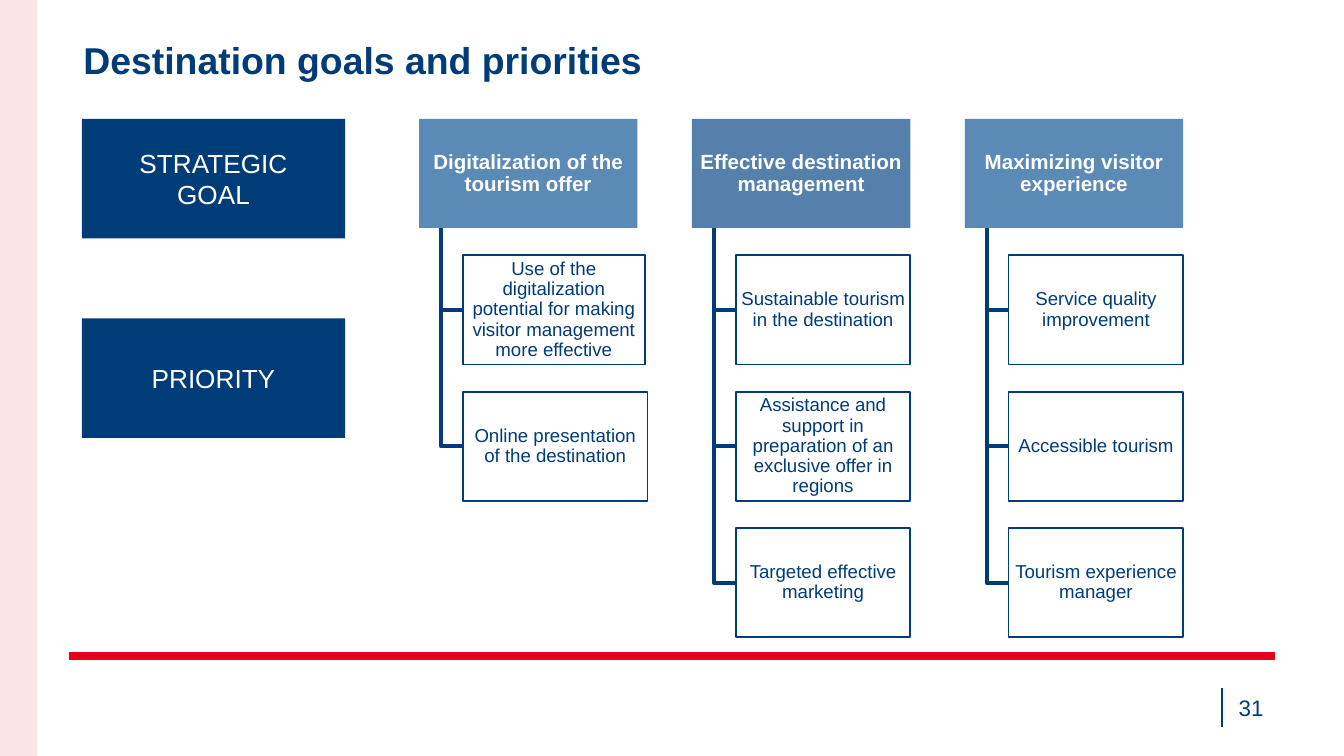
from dataclasses import dataclass

from lxml.etree import SubElement
from pptx import Presentation
from pptx.dml.color import RGBColor
from pptx.enum.shapes import MSO_CONNECTOR, MSO_SHAPE
from pptx.enum.text import MSO_ANCHOR, PP_ALIGN
from pptx.oxml.ns import qn
from pptx.util import Pt

NAVY, WHITE, RED, PINK = "003C78", "FFFFFF", "E6001E", "FCE5E8"
LIGHT_BLUE, MID_BLUE = "5C8AB7", "5480AB"

TOP = 63.7
COLUMN_LEFT, COLUMN_STEP = 224.5, 146.2
ROW_STEP = 73.1
HEADING_WIDTH, BOX_HEIGHT = 117, 58.5
TRUNK_INDENT, BOX_INDENT = 11.7, 23.4


@dataclass
class Priority:
    text: str
    width: float = 93.6


@dataclass
class Goal:
    text: str
    fill: str
    priorities: list[Priority]


@dataclass
class Label:
    text: str
    top: float


GOALS = [
    Goal("Digitalization of the tourism offer", LIGHT_BLUE, [
        Priority("Use of the digitalization potential for making visitor management "
                 "more effective", 97.5),
        Priority("Online presentation of the destination", 99),
    ]),
    Goal("Effective destination management", MID_BLUE, [
        Priority("Sustainable tourism in the destination"),
        Priority("Assistance and support in preparation of an exclusive offer in regions"),
        Priority("Targeted effective marketing"),
    ]),
    Goal("Maximizing visitor experience", LIGHT_BLUE, [
        Priority("Service quality improvement"),
        Priority("Accessible tourism"),
        Priority("Tourism experience manager"),
    ]),
]
LABELS = [Label("STRATEGIC\nGOAL", TOP), Label("PRIORITY", 170.6)]


def color(value: str) -> RGBColor:
    return RGBColor.from_string(value)


def write(shape, text: str, *, size: float, font_color: str = NAVY, bold: bool = False,
          align=PP_ALIGN.CENTER, spacing: float = 1.0, inset: tuple = (7.2, 3.6)) -> None:
    """Fill a shape with text, one paragraph per line; inset is (sides, top and bottom)."""
    frame = shape.text_frame
    frame.text = text
    frame.word_wrap = True
    frame.vertical_anchor = MSO_ANCHOR.MIDDLE
    frame.margin_left = frame.margin_right = Pt(inset[0])
    frame.margin_top = frame.margin_bottom = Pt(inset[1])
    for paragraph in frame.paragraphs:
        paragraph.alignment = align
        paragraph.line_spacing = spacing
        paragraph.space_before = Pt(0)
        for run in paragraph.runs:
            run.font.name = "Arial"
            run.font.size = Pt(size)
            run.font.bold = bold
            run.font.color.rgb = color(font_color)


def add_box(slide, left: float, top: float, width: float, height: float,
            fill: str, line: str | None = None):
    shape = slide.shapes.add_shape(
        MSO_SHAPE.RECTANGLE, Pt(left), Pt(top), Pt(width), Pt(height))
    shape.shadow.inherit = False
    shape.fill.solid()
    shape.fill.fore_color.rgb = color(fill)
    if line:
        shape.line.color.rgb = color(line)
        shape.line.width = Pt(1)
    else:
        shape.line.fill.background()
    return shape


def add_line(slide, start: tuple, end: tuple, line: str, width: float) -> None:
    connector = slide.shapes.add_connector(
        MSO_CONNECTOR.STRAIGHT, *(Pt(value) for value in (*start, *end)))
    connector.line.color.rgb = color(line)
    connector.line.width = Pt(width)
    SubElement(connector._element.spPr, qn("a:effectLst"))


def add_branch(slide, left: float, top: float, right: float, bottom: float) -> None:
    """Draw an elbow that goes down and then right."""
    builder = slide.shapes.build_freeform(Pt(left), Pt(top))
    builder.add_line_segments(
        [(Pt(left), Pt(bottom)), (Pt(right), Pt(bottom))], close=False)
    branch = builder.convert_to_shape()
    branch.shadow.inherit = False
    branch.fill.background()
    branch.line.color.rgb = color(NAVY)
    branch.line.width = Pt(2)


def add_goal(slide, goal: Goal, left: float) -> None:
    heading = add_box(slide, left, TOP, HEADING_WIDTH, BOX_HEIGHT, goal.fill)
    write(heading, goal.text, size=11, font_color=WHITE, bold=True,
          spacing=0.9, inset=(1.4, 1.4))
    box_left = left + BOX_INDENT
    for row, priority in enumerate(goal.priorities, start=1):
        top = TOP + row * ROW_STEP
        add_branch(slide, left + TRUNK_INDENT, TOP + BOX_HEIGHT,
                   box_left, top + BOX_HEIGHT / 2)
        box = add_box(slide, box_left, top, priority.width, BOX_HEIGHT, WHITE, NAVY)
        write(box, priority.text, size=10, spacing=0.9, inset=(1.4, 0.9))


def main() -> None:
    presentation = Presentation()
    presentation.slide_width, presentation.slide_height = Pt(720), Pt(405)
    slide = presentation.slides.add_slide(presentation.slide_layouts[5])

    add_line(slide, (36.9, 351.5), (683, 351.5), RED, 4.5)
    add_line(slide, (654.7, 368.6), (654.7, 389.5), NAVY, 0.75)
    number = slide.shapes.add_textbox(Pt(654.5), Pt(368), Pt(29.5), Pt(22))
    write(number, "31", size=12, align=PP_ALIGN.RIGHT)

    title = slide.shapes.title
    title.left, title.top, title.width, title.height = Pt(37.5), Pt(15.5), Pt(670), Pt(33)
    write(title, "Destination goals and priorities", size=20, bold=True,
          align=PP_ALIGN.LEFT)

    for column, goal in enumerate(GOALS):
        add_goal(slide, goal, COLUMN_LEFT + column * COLUMN_STEP)
    for label in LABELS:
        box = add_box(slide, 43.9, label.top, 141, 64, NAVY)
        write(box, label.text, size=14, font_color=WHITE)
    add_box(slide, 0, 0, 20, 405, PINK)

    presentation.save("out.pptx")


if __name__ == "__main__":
    main()
